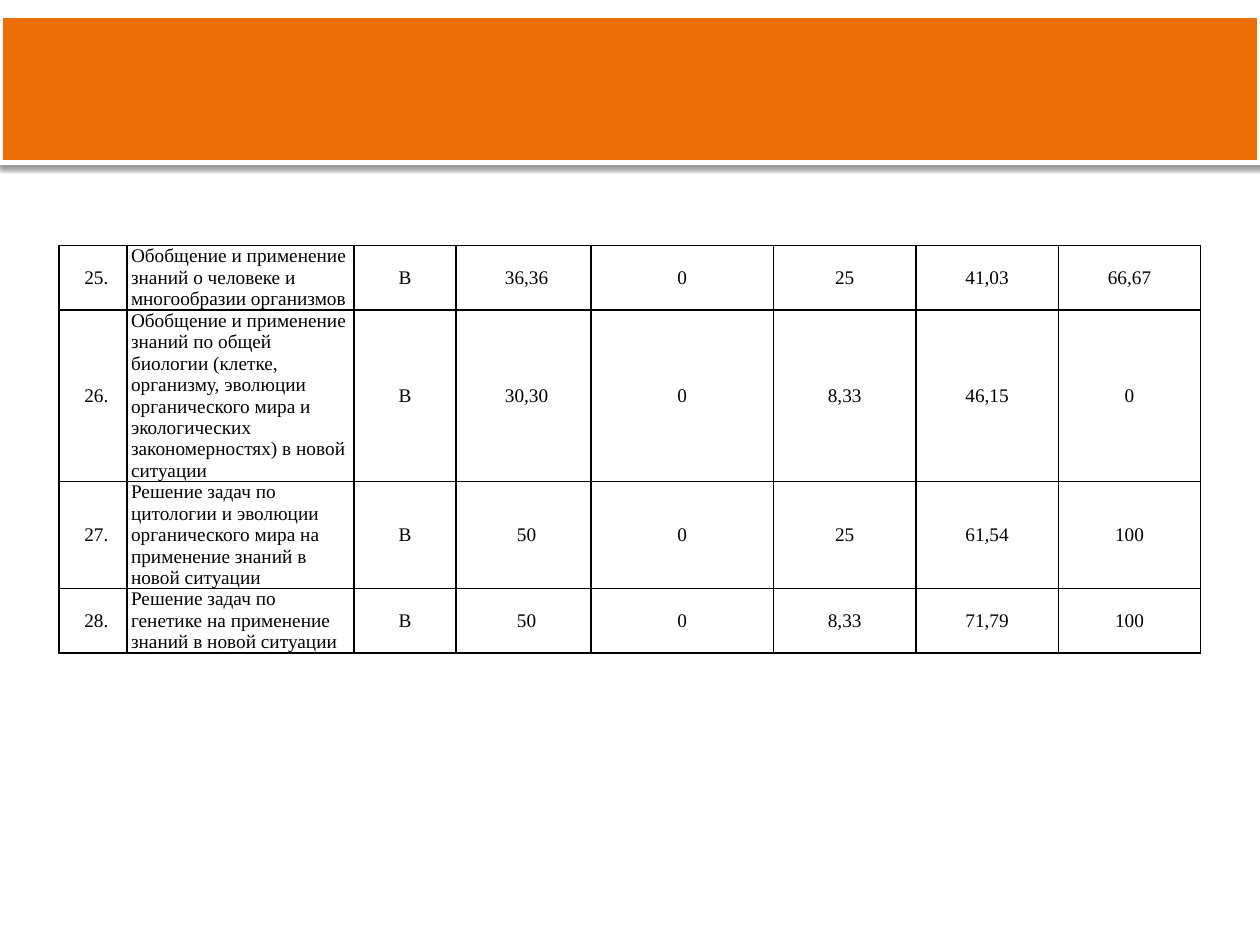
from lxml import etree
from pptx import Presentation
from pptx.dml.color import RGBColor
from pptx.enum.shapes import MSO_SHAPE
from pptx.enum.text import MSO_ANCHOR, PP_ALIGN
from pptx.oxml.ns import qn
from pptx.util import Inches, Pt

RECTANGLE = MSO_SHAPE.RECTANGLE
MIDDLE = MSO_ANCHOR.MIDDLE
LEFT, CENTER = PP_ALIGN.LEFT, PP_ALIGN.CENTER

COLORS = {"banner": "EB6E07", "white": "FFFFFF", "black": "000000"}
FONT = "Times New Roman"
BLANK_LAYOUT = 6

COLUMN_WIDTHS = [0.54, 1.8, 0.81, 1.07, 1.45, 1.13, 1.13, 1.13]
ROW_HEIGHTS = [0.51, 1.36, 0.85, 0.51]
TOPIC_COLUMN = 1
FIRST_LINE_INDENTS = {0: 0.05, 2: -0.08, 3: 0.05}
ROWS = [
    ["25.", "Обобщение и применение знаний о человеке и многообразии организмов",
     "В", "36,36", "0", "25", "41,03", "66,67"],
    ["26.", "Обобщение и применение знаний по общей биологии (клетке, организму, "
     "эволюции органического мира и экологических закономерностях) в новой ситуации",
     "В", "30,30", "0", "8,33", "46,15", "0"],
    ["27.", "Решение задач по цитологии и эволюции органического мира на "
     "применение знаний в новой ситуации",
     "В", "50", "0", "25", "61,54", "100"],
    ["28.", "Решение задач по генетике на применение знаний в новой ситуации",
     "В", "50", "0", "8,33", "71,79", "100"],
]


def rgb(name):
    return RGBColor.from_string(COLORS[name])


def add_child(parent, tag, **attributes):
    values = {key: str(value) for key, value in attributes.items()}
    return etree.SubElement(parent, qn(tag), values)


def add_shadow(shape):
    """Give the shape a soft shadow that falls straight down."""
    shape.shadow.inherit = False
    effects = shape._element.spPr.find(qn("a:effectLst"))
    shadow = add_child(effects, "a:outerShdw", blurRad=Pt(3.1), dist=Pt(1.6),
                       dir=90 * 60000, algn="t", rotWithShape=0)
    color = add_child(shadow, "a:srgbClr", val=COLORS["black"])
    add_child(color, "a:alpha", val=38000)


def add_banner(slide):
    banner = slide.shapes.add_shape(
        RECTANGLE, Inches(0), Inches(0.12), Inches(10), Inches(1.17))
    banner.fill.solid()
    banner.fill.fore_color.rgb = rgb("banner")
    banner.line.color.rgb = rgb("white")
    banner.line.width = Pt(3)
    add_shadow(banner)


def add_borders(cell):
    properties = cell._tc.get_or_add_tcPr()
    for side in ("a:lnL", "a:lnR", "a:lnT", "a:lnB"):
        line = add_child(properties, side, w=Pt(1))
        fill = add_child(line, "a:solidFill")
        add_child(fill, "a:srgbClr", val=COLORS["black"])


def fill_cell(cell, text, alignment, indent):
    add_borders(cell)
    cell.fill.background()
    cell.vertical_anchor = MIDDLE
    cell.margin_left = cell.margin_right = Inches(0.03)
    cell.margin_top = cell.margin_bottom = 0
    paragraph = cell.text_frame.paragraphs[0]
    paragraph.alignment = alignment
    if indent:
        properties = paragraph._p.get_or_add_pPr()
        properties.set("marL", "0")
        properties.set("indent", str(Inches(indent)))
    run = paragraph.add_run()
    run.text = text
    run.font.name = FONT
    run.font.size = Pt(11)
    run.font.color.rgb = rgb("black")


def add_results_table(slide):
    frame = slide.shapes.add_table(
        len(ROWS), len(COLUMN_WIDTHS), Inches(0.47), Inches(1.95),
        Inches(sum(COLUMN_WIDTHS)), Inches(sum(ROW_HEIGHTS)))
    table = frame.table
    table.first_row = table.horz_banding = False
    for column, width in zip(table.columns, COLUMN_WIDTHS):
        column.width = Inches(width)
    for row, height in zip(table.rows, ROW_HEIGHTS):
        row.height = Inches(height)
    for row_index, texts in enumerate(ROWS):
        for column_index, text in enumerate(texts):
            alignment = LEFT if column_index == TOPIC_COLUMN else CENTER
            fill_cell(table.cell(row_index, column_index), text, alignment,
                      FIRST_LINE_INDENTS.get(column_index))


def main():
    presentation = Presentation()
    presentation.slide_width = Inches(10)
    presentation.slide_height = Inches(7.5)
    slide = presentation.slides.add_slide(presentation.slide_layouts[BLANK_LAYOUT])
    add_banner(slide)
    add_results_table(slide)
    presentation.save("out.pptx")


if __name__ == "__main__":
    main()
